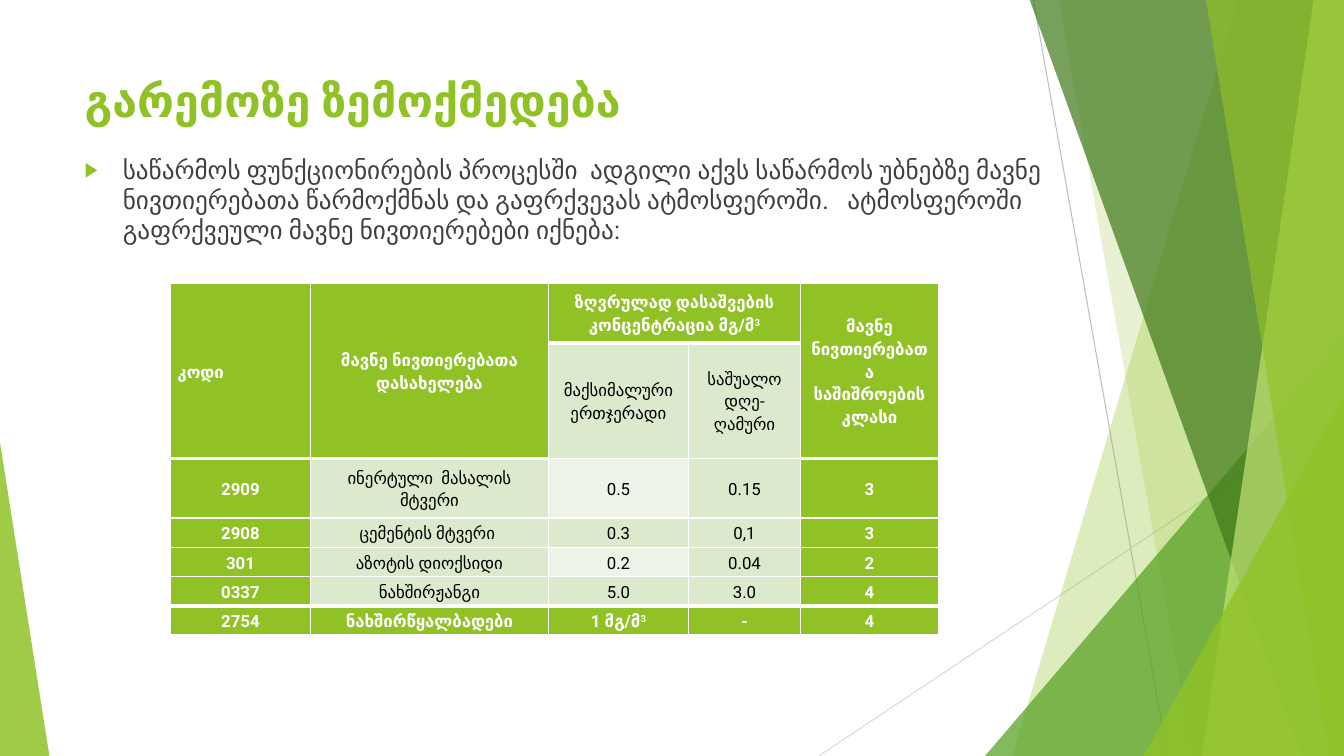
from lxml import etree
from pptx import Presentation
from pptx.dml.color import RGBColor
from pptx.enum.shapes import MSO_CONNECTOR, MSO_SHAPE
from pptx.enum.text import MSO_ANCHOR, PP_ALIGN
from pptx.oxml.ns import qn
from pptx.util import Inches, Pt

STRAIGHT = MSO_CONNECTOR.STRAIGHT
TRIANGLE = MSO_SHAPE.ISOSCELES_TRIANGLE
LEFT, CENTER, JUSTIFY = PP_ALIGN.LEFT, PP_ALIGN.CENTER, PP_ALIGN.JUSTIFY
TOP, MIDDLE = MSO_ANCHOR.TOP, MSO_ANCHOR.MIDDLE

FONT = "Roboto"
COLORS = {
    "green": "90C226", "leaf": "54A021", "forest": "3F7819", "lime": "C0E474",
    "light": "DBE9CD", "pale": "EEF4E8", "white": "FFFFFF", "black": "000000",
    "text": "404040", "gray": "BFBFBF", "silver": "D9D9D9",
}

# Table: "^" switches superscript on and off, None is covered by a merged cell
COLUMN_WIDTHS = [1.39, 2.36, 1.39, 1.11, 1.37]
ROW_HEIGHTS = [0.59, 0.89, 0.59] + [0.29] * 4
ROWS = [
    ["კოდი", "მავნე ნივთიერებათა დასახელება",
     "ზღვრულად დასაშვების კონცენტრაცია მგ/მ^3", None,
     "მავნე ნივთიერებათა საშიშროების კლასი"],
    [None, None, "მაქსიმალური ერთჯერადი", "საშუალო დღე-ღამური", None],
    ["2909", "ინერტული  მასალის მტვერი", "0.5", "0.15", "3"],
    ["2908", "ცემენტის მტვერი ", "0.3", "0,1", "3"],
    ["301", "აზოტის დიოქსიდი", "0.2", "0.04", "2"],
    ["0337", "ნახშირჟანგი", "5.0", "3.0", "4"],
    ["2754", "ნახშირწყალბადები", "1 მგ/მ^3", "-", "4"],
]
MERGES = [((0, 0), (1, 0)), ((0, 1), (1, 1)), ((0, 2), (0, 3)), ((0, 4), (1, 4))]
LAST_ROW = len(ROWS) - 1
PALE_CELLS = [(2, 2), (4, 2)]


def rgb(name):
    return RGBColor.from_string(COLORS[name])


def write_text(text_frame, text, size, color, bold=False, align=LEFT, anchor=TOP,
               line_spacing=None, space_before=None):
    text_frame.word_wrap = True
    text_frame.vertical_anchor = anchor
    paragraph = text_frame.paragraphs[0]
    paragraph.alignment = align
    paragraph.line_spacing = line_spacing
    paragraph.space_before = space_before
    for index, part in enumerate(text.split("^")):
        run = paragraph.add_run()
        run.text = part
        run.font.name = FONT
        run.font.size = Pt(size)
        run.font.bold = bold
        run.font.color.rgb = rgb(color)
        if index % 2:
            run.font._element.set("baseline", "30000")
    return paragraph


def add_text_box(slide, left, top, width, height, text, **text_format):
    box = slide.shapes.add_textbox(Inches(left), Inches(top), Inches(width), Inches(height))
    return write_text(box.text_frame, text, **text_format)


def add_bullet(paragraph, character, color, percent, indent):
    properties = paragraph._p.get_or_add_pPr()
    properties.set("marL", str(Inches(indent)))
    properties.set("indent", str(-Inches(indent)))
    bullet_color = etree.SubElement(properties, qn("a:buClr"))
    etree.SubElement(bullet_color, qn("a:srgbClr"), val=COLORS[color])
    etree.SubElement(properties, qn("a:buSzPct"), val=str(percent * 1000))
    etree.SubElement(properties, qn("a:buFont"), typeface="Arial")
    etree.SubElement(properties, qn("a:buChar"), char=character)


def add_line(slide, start, end, color):
    points = [Inches(value) for value in (*start, *end)]
    line = slide.shapes.add_connector(STRAIGHT, *points)
    line.line.color.rgb = rgb(color)
    line.line.width = Pt(0.75)
    etree.SubElement(line._element.spPr, qn("a:effectLst"))


def paint(shape, color, opacity):
    shape.shadow.inherit = False
    shape.line.fill.background()
    shape.fill.solid()
    shape.fill.fore_color.rgb = rgb(color)
    color_element = shape._element.spPr.find(qn("a:solidFill"))[0]
    etree.SubElement(color_element, qn("a:alpha"), val=str(opacity * 1000))


def add_band(slide, top_left, bottom_left, color, opacity):
    """Band from its slanted left edge to the right side of the slide."""
    corners = [(top_left, -0.01), (13.33, -0.01), (13.33, 7.5), (bottom_left, 7.5)]
    points = [(Inches(x), Inches(y)) for x, y in corners]
    builder = slide.shapes.build_freeform(*points[0])
    builder.add_line_segments(points[1:], close=True)
    paint(builder.convert_to_shape(), color, opacity)


def add_triangle(slide, left, top, width, apex, color, opacity):
    """Triangle standing on the bottom of the slide."""
    shape = slide.shapes.add_shape(
        TRIANGLE, Inches(left), Inches(top), Inches(width), Inches(7.5 - top))
    shape.adjustments[0] = apex
    paint(shape, color, opacity)


def set_borders(cell, top, bottom):
    properties = cell._tc.get_or_add_tcPr()
    widths = {"a:lnL": 1, "a:lnR": 1, "a:lnT": top, "a:lnB": bottom}
    for index, (side, width) in enumerate(widths.items()):
        border = etree.Element(qn(side), w=str(Pt(width)))
        fill = etree.SubElement(border, qn("a:solidFill"))
        etree.SubElement(fill, qn("a:srgbClr"), val=COLORS["white"])
        properties.insert(index, border)


def format_cell(cell, row, column, text):
    strong = row in (0, LAST_ROW) or column in (0, 4)
    fill = "green" if strong else "pale" if (row, column) in PALE_CELLS else "light"
    cell.fill.solid()
    cell.fill.fore_color.rgb = rgb(fill)
    cell.margin_left = cell.margin_right = Inches(0.07)
    cell.margin_top = cell.margin_bottom = 0
    # Thick rules lie under the header and above the last row
    header_end = 0 if column in (2, 3) else 1
    thick_rows = (header_end, LAST_ROW - 1)
    set_borders(cell, top=3 if row - 1 in thick_rows else 1,
                bottom=3 if row == 0 or row in thick_rows else 1)
    if text is not None:
        cell.vertical_anchor = MIDDLE
        write_text(cell.text_frame, text, size=12, bold=strong, anchor=MIDDLE,
                   color="white" if strong else "black", line_spacing=1.15,
                   align=JUSTIFY if row == column == 0 else CENTER)


def add_substance_table(slide):
    frame = slide.shapes.add_table(
        len(ROWS), len(COLUMN_WIDTHS), Inches(1.69), Inches(2.81),
        Inches(sum(COLUMN_WIDTHS)), Inches(sum(ROW_HEIGHTS)))
    table = frame.table
    table.first_row = table.horz_banding = False
    for column, width in zip(table.columns, COLUMN_WIDTHS):
        column.width = Inches(width)
    for row, height in zip(table.rows, ROW_HEIGHTS):
        row.height = Inches(height)
    for first, last in MERGES:
        table.cell(*first).merge(table.cell(*last))
    for row, texts in enumerate(ROWS):
        for column, text in enumerate(texts):
            format_cell(table.cell(row, column), row, column, text)


def add_decoration(slide):
    add_line(slide, (10.25, 0), (11.58, 7.5), "gray")
    add_line(slide, (13.33, 4.03), (8.12, 7.5), "silver")
    add_band(slide, 12.28, 10.04, "green", 30)
    add_band(slide, 10.5, 11.83, "green", 20)
    add_triangle(slide, 9.77, 3.33, 3.56, 1, "leaf", 72)
    add_band(slide, 10.21, 12.91, "forest", 70)
    add_band(slide, 13.03, 11.92, "lime", 70)
    add_band(slide, 11.96, 13.18, "green", 65)
    add_triangle(slide, 11.34, 3.93, 1.99, 1, "green", 80)
    add_triangle(slide, 0, 4.39, 0.49, 0, "green", 85)


def main():
    presentation = Presentation()
    presentation.slide_width = Inches(13.33)
    presentation.slide_height = Inches(7.5)
    slide = presentation.slides.add_slide(presentation.slide_layouts[6])

    add_decoration(slide)

    # Title and introduction
    add_text_box(slide, 0.74, 0.67, 9.4, 1.44, "გარემოზე ზემოქმედება",
                 size=32, color="green", bold=True)
    introduction = add_text_box(
        slide, 0.74, 1.48, 10.02, 5.62,
        "საწარმოს ფუნქციონირების პროცესში  ადგილი აქვს საწარმოს უბნებზე მავნე "
        "ნივთიერებათა წარმოქმნას და გაფრქვევას ატმოსფეროში.   ატმოსფეროში "
        "გაფრქვეული მავნე ნივთიერებები იქნება:",
        size=18, color="text", space_before=Pt(10))
    add_bullet(introduction, "▶", "green", percent=80, indent=0.38)

    add_substance_table(slide)
    presentation.save("out.pptx")


if __name__ == "__main__":
    main()
